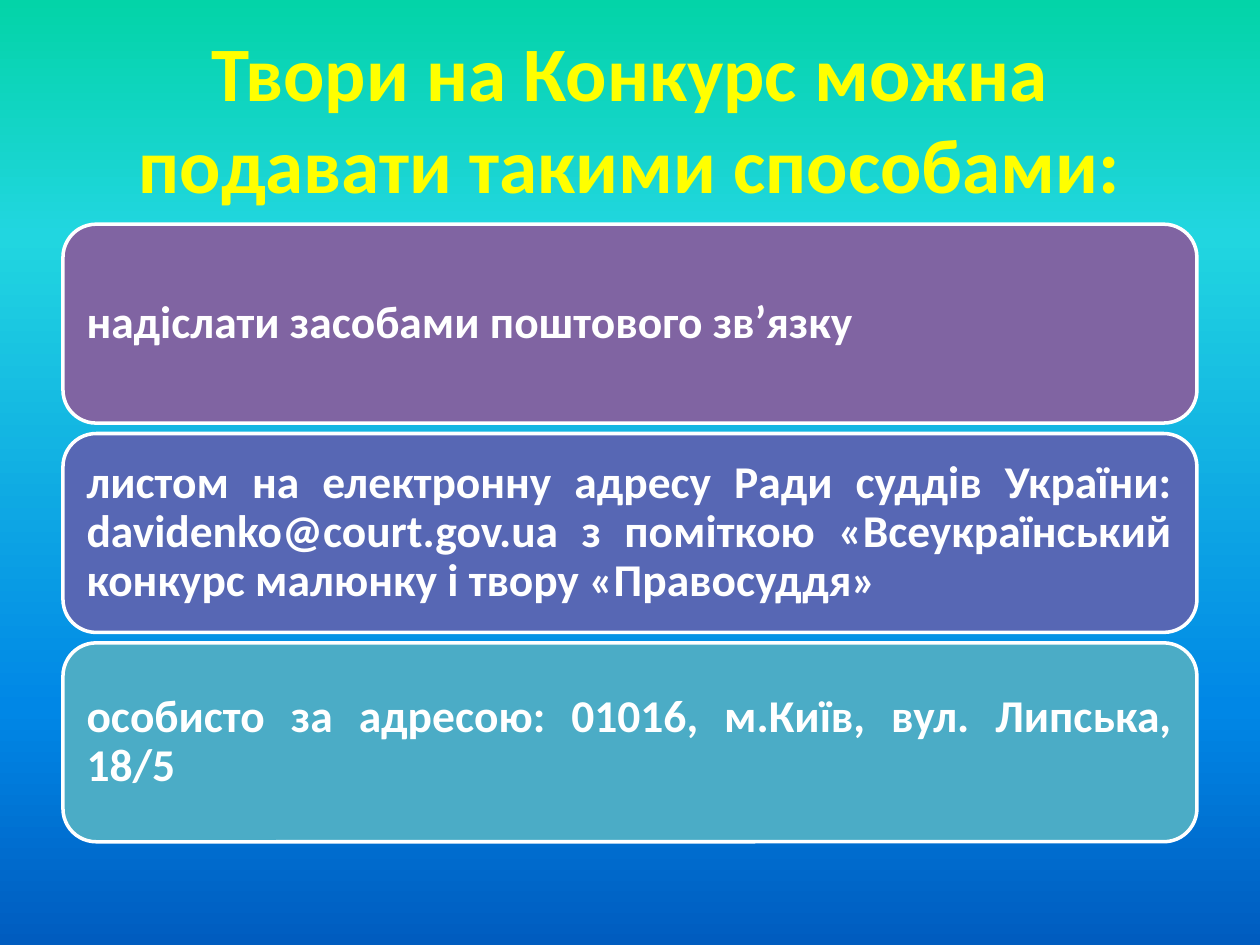
"""Build the slide listing the ways to submit contest entries."""
from copy import deepcopy

from lxml import etree
from pptx import Presentation
from pptx import util as u
from pptx.dml.color import RGBColor
from pptx.enum import shapes, text
from pptx.oxml.ns import qn

FONT = "Calibri"
WHITE = RGBColor(0xFF, 0xFF, 0xFF)
YELLOW = RGBColor(0xFF, 0xFF, 0x00)
NAVY = RGBColor(0x05, 0x46, 0x97)
PURPLE = RGBColor(0x80, 0x64, 0xA2)
INDIGO = RGBColor(0x57, 0x67, 0xB4)
TEAL = RGBColor(0x4B, 0xAC, 0xC6)
SKY = [
    (0, RGBColor(0x03, 0xD4, 0xA8)),
    (0.25, RGBColor(0x21, 0xD6, 0xE0)),
    (0.75, RGBColor(0x00, 0x87, 0xE6)),
    (1, RGBColor(0x00, 0x5C, 0xBF)),
]

LEFT, WIDTH = u.Cm(1.27), u.Cm(22.86)
CARD_TOP, CARD_HEIGHT, CARD_STEP = u.Cm(4.52), u.Cm(4.01), u.Cm(4.22)
CARD_INSET = u.Cm(0.28)

TITLE = "Твори на Конкурс можна подавати такими способами:"
WAYS = [
    ("надіслати засобами поштового зв’язку", PURPLE, text.PP_ALIGN.LEFT),
    ("листом на електронну адресу Ради суддів України: "
     "davidenko@court.gov.ua з поміткою «Всеукраїнський конкурс малюнку "
     "і твору «Правосуддя»", INDIGO, text.PP_ALIGN.JUSTIFY),
    ("особисто за адресою: 01016, м.Київ, вул. Липська, 18/5",
     TEAL, text.PP_ALIGN.JUSTIFY),
]


def paint_background(slide):
    fill = slide.background.fill
    fill.gradient()
    fill.gradient_angle = 270
    stop_list = slide.element.find(".//" + qn("a:gsLst"))
    for _ in range(len(SKY) - len(stop_list)):
        stop_list.append(deepcopy(stop_list[0]))
    for stop, (position, color) in zip(fill.gradient_stops, SKY):
        stop.position = position
        stop.color.rgb = color


def write(shape, wording, size, color, alignment):
    frame = shape.text_frame
    frame.word_wrap = True
    frame.vertical_anchor = text.MSO_ANCHOR.MIDDLE
    paragraph = frame.paragraphs[0]
    paragraph.text = wording
    paragraph.alignment = alignment
    font = paragraph.font
    font.name, font.size, font.bold = FONT, u.Pt(size), True
    font.color.rgb = color
    return paragraph


def outline_text(shape, color, width):
    properties = shape.element.find(".//" + qn("a:defRPr"))
    line = etree.Element(qn("a:ln"), w=str(width))
    fill = etree.SubElement(line, qn("a:solidFill"))
    etree.SubElement(fill, qn("a:srgbClr"), val=str(color))
    properties.insert(0, line)


def add_title(slide):
    title = slide.shapes.add_textbox(LEFT, u.Cm(0.76), WIDTH, u.Cm(3.18))
    write(title, TITLE, 44, YELLOW, text.PP_ALIGN.CENTER)
    outline_text(title, NAVY, u.Pt(1))


def add_card(slide, top, wording, color, alignment):
    card = slide.shapes.add_shape(
        shapes.MSO_SHAPE.ROUNDED_RECTANGLE, LEFT, top, WIDTH, CARD_HEIGHT)
    card.shadow.inherit = False
    card.fill.solid()
    card.fill.fore_color.rgb = color
    card.line.color.rgb = WHITE
    card.line.width = u.Pt(2)
    frame = card.text_frame
    frame.margin_left = frame.margin_right = CARD_INSET
    frame.margin_top = frame.margin_bottom = CARD_INSET
    paragraph = write(card, wording, 26, WHITE, alignment)
    paragraph.line_spacing = 0.9


def main():
    presentation = Presentation()
    presentation.slide_width = u.Cm(25.4)
    presentation.slide_height = u.Cm(19.05)
    slide = presentation.slides.add_slide(presentation.slide_layouts[6])
    paint_background(slide)
    add_title(slide)
    for index, way in enumerate(WAYS):
        add_card(slide, CARD_TOP + index * CARD_STEP, *way)
    presentation.save("out.pptx")


if __name__ == "__main__":
    main()
